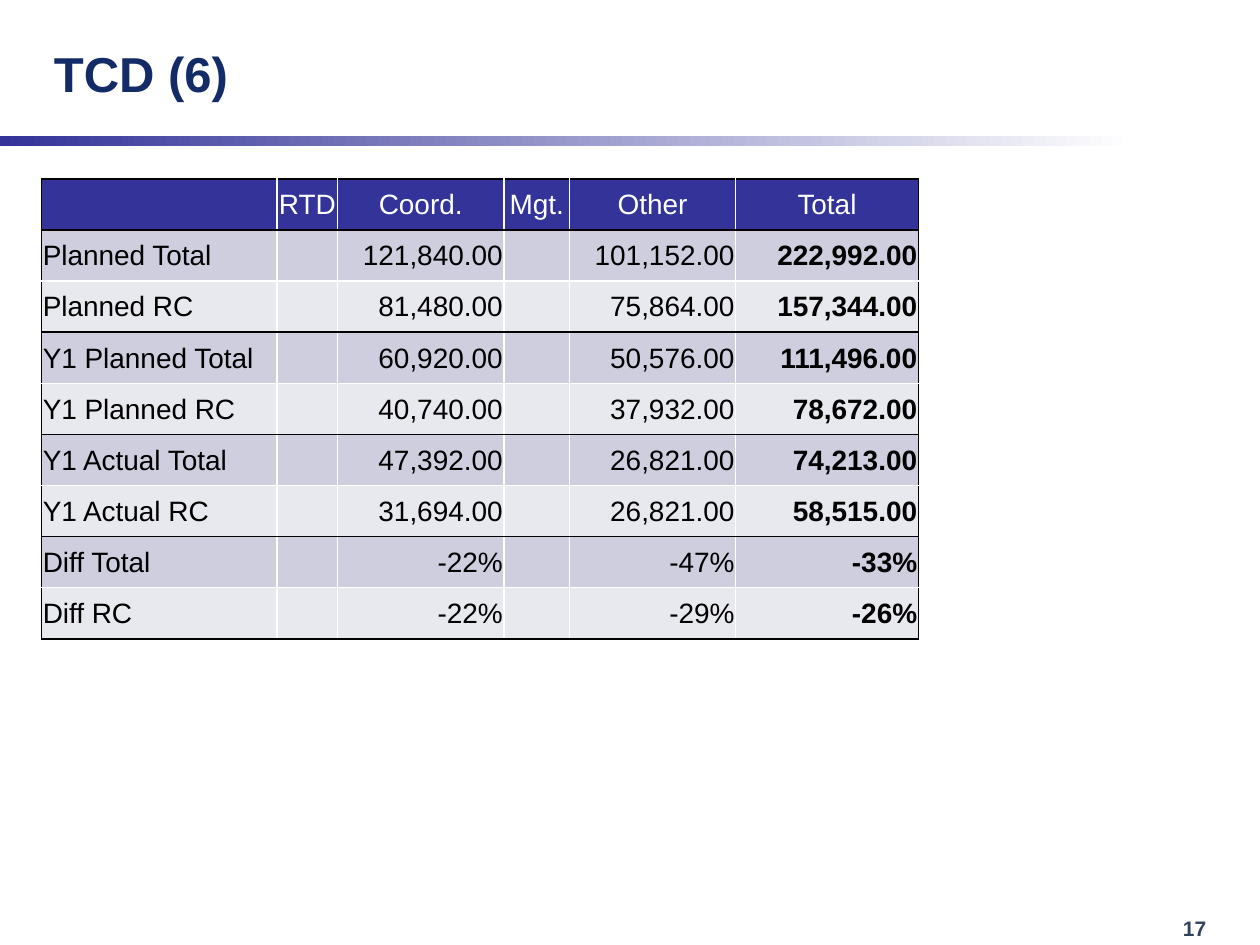
from lxml.etree import SubElement
from pptx import Presentation
from pptx.dml.color import RGBColor
from pptx.enum.shapes import MSO_SHAPE
from pptx.enum.text import MSO_ANCHOR, PP_ALIGN
from pptx.oxml.ns import qn
from pptx.util import Inches, Pt

COLORS = {
    "title": "132B66",
    "number": "32425D",
    "accent": "333399",
    "dark_band": "CECEDE",
    "light_band": "E8E8EF",
    "black": "000000",
    "white": "FFFFFF",
}
FONT = "Arial"
COLUMN_WIDTHS = [1.87, 0.48, 1.32, 0.52, 1.32, 1.45]
ROWS = [
    ["", "RTD", "Coord.", "Mgt.", "Other", "Total"],
    ["Planned Total", "", "121,840.00", "", "101,152.00", "222,992.00"],
    ["Planned RC", "", "81,480.00", "", "75,864.00", "157,344.00"],
    ["Y1 Planned Total", "", "60,920.00", "", "50,576.00", "111,496.00"],
    ["Y1 Planned RC", "", "40,740.00", "", "37,932.00", "78,672.00"],
    ["Y1 Actual Total", "", "47,392.00", "", "26,821.00", "74,213.00"],
    ["Y1 Actual RC", "", "31,694.00", "", "26,821.00", "58,515.00"],
    ["Diff Total", "", "-22%", "", "-47%", "-33%"],
    ["Diff RC", "", "-22%", "", "-29%", "-26%"],
]


def color(name):
    return RGBColor.from_string(COLORS[name])


def format_runs(paragraph, size, color_name, bold=False):
    for run in paragraph.runs:
        run.font.name = FONT
        run.font.size = Pt(size)
        run.font.bold = bold
        run.font.color.rgb = color(color_name)


def add_label(slide, text, left, top, width, height, size, color_name, anchor):
    text_box = slide.shapes.add_textbox(Inches(left), Inches(top), Inches(width), Inches(height))
    text_frame = text_box.text_frame
    text_frame.word_wrap = True
    text_frame.vertical_anchor = anchor
    text_frame.text = text
    format_runs(text_frame.paragraphs[0], size, color_name, bold=True)


def add_gradient_rule(slide, left, top, width, height):
    rule = slide.shapes.add_shape(
        MSO_SHAPE.RECTANGLE, Inches(left), Inches(top), Inches(width), Inches(height)
    )
    rule.shadow.inherit = False
    rule.line.fill.background()
    rule.fill.gradient()
    rule.fill.gradient_angle = 0
    stops = [(0, "accent"), (0.9, "white")]
    for stop, (position, name) in zip(rule.fill.gradient_stops, stops):
        stop.position = position
        stop.color.rgb = color(name)


def set_borders(cell, row, column):
    """Frame the table and each pair of rows in black, with white lines inside."""
    black_sides = {
        "L": column == 0,
        "R": column == len(COLUMN_WIDTHS) - 1,
        "T": row == 0 or row % 2 == 1,
        "B": row % 2 == 0,
    }
    properties = cell._tc.get_or_add_tcPr()
    for side, is_black in black_sides.items():
        line = SubElement(properties, qn(f"a:ln{side}"), w=str(Pt(1)))
        fill = SubElement(line, qn("a:solidFill"))
        SubElement(fill, qn("a:srgbClr"), val=COLORS["black" if is_black else "white"])


def format_cell(cell, text, row, column):
    is_header = row == 0
    set_borders(cell, row, column)
    cell.fill.solid()
    band = "dark_band" if row % 2 else "light_band"
    cell.fill.fore_color.rgb = color("accent" if is_header else band)
    cell.margin_left = cell.margin_right = cell.margin_top = Inches(0.01)
    cell.margin_bottom = 0
    cell.vertical_anchor = MSO_ANCHOR.MIDDLE
    if not text:
        return
    cell.text_frame.text = text
    paragraph = cell.text_frame.paragraphs[0]
    if is_header:
        paragraph.alignment = PP_ALIGN.CENTER
    else:
        paragraph.alignment = PP_ALIGN.RIGHT if column else PP_ALIGN.LEFT
    is_total = not is_header and column == len(COLUMN_WIDTHS) - 1
    format_runs(paragraph, 16, "white" if is_header else "black", bold=is_total)


def add_budget_table(slide, left, top, height):
    table = slide.shapes.add_table(
        len(ROWS), len(COLUMN_WIDTHS), Inches(left), Inches(top),
        Inches(sum(COLUMN_WIDTHS)), Inches(height),
    ).table
    for column, width in zip(table.columns, COLUMN_WIDTHS):
        column.width = Inches(width)
    for row, texts in enumerate(ROWS):
        for column, text in enumerate(texts):
            format_cell(table.cell(row, column), text, row, column)


def main():
    presentation = Presentation()
    presentation.slide_width = Inches(10)
    presentation.slide_height = Inches(7.5)
    slide = presentation.slides.add_slide(presentation.slide_layouts[6])
    add_label(slide, "17", 9.29, 7.22, 0.64, 0.3, 12, "number", MSO_ANCHOR.TOP)
    add_gradient_rule(slide, 0, 1.08, 10, 0.08)
    add_label(slide, "TCD (6)", 0.33, 0.08, 7.08, 1, 28, "title", MSO_ANCHOR.MIDDLE)
    add_budget_table(slide, 0.33, 1.42, 3.65)
    presentation.save("out.pptx")


if __name__ == "__main__":
    main()
